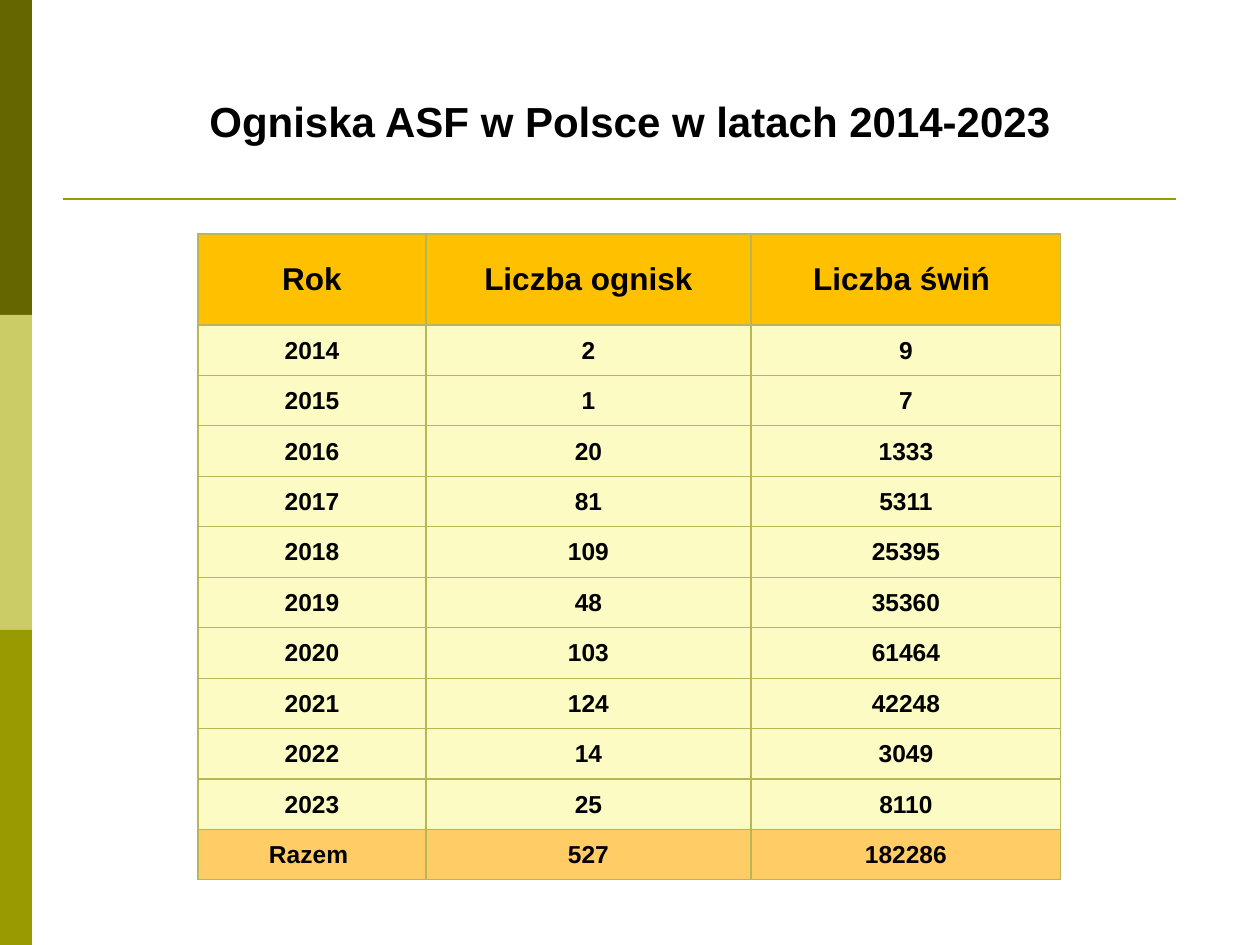
from dataclasses import dataclass

from lxml import etree
from pptx import Presentation
from pptx.dml.color import RGBColor
from pptx.enum.shapes import MSO_CONNECTOR, MSO_SHAPE
from pptx.enum.text import MSO_ANCHOR, PP_ALIGN
from pptx.oxml.ns import qn
from pptx.util import Emu, Pt

RECT = MSO_SHAPE.RECTANGLE
STRAIGHT = MSO_CONNECTOR.STRAIGHT
CENTER = PP_ALIGN.CENTER
MIDDLE = MSO_ANCHOR.MIDDLE
BOTTOM = MSO_ANCHOR.BOTTOM
TITLE_ONLY = 5

FONT = "Arial"
PX_PER_INCH = 126
COLORS = {
    "text": "000000",
    "dark": "666600",
    "light": "CCCC66",
    "olive": "999900",
    "header": "FFC000",
    "body": "FDFBC4",
    "total": "FFCC66",
    "border": "B7B758",
}

TITLE = "Ogniska ASF w Polsce w latach 2014-2023"
BAR_W, BAR_H = 32, 315
BAR_COLORS = ["dark", "light", "olive"]
COL_WIDTHS = [228, 325, 310]
HEADER_H, BODY_H = 91, 555


@dataclass
class Row:
    cells: tuple[str, str, str]
    fill: str = "body"
    size: int = 14


ROWS = [
    Row(("Rok", "Liczba ognisk", "Liczba świń "), "header", 18),
    Row(("2014", "2", "9")),
    Row(("2015", "1", "7")),
    Row(("2016", "20", "1333")),
    Row(("2017", "81", "5311")),
    Row(("2018", "109", "25395")),
    Row(("2019", "48", "35360")),
    Row(("2020", "103", "61464")),
    Row(("2021", "124", "42248")),
    Row(("2022", "14", "3049")),
    Row(("2023", "25", "8110")),
    Row(("Razem ", "527", "182286"), "total"),
]


def px(n: int) -> Emu:
    return Emu(round(n * 914400 / PX_PER_INCH))


def rgb(name: str) -> RGBColor:
    return RGBColor.from_string(COLORS[name])


def write(tf, text: str, size: int) -> None:
    p = tf.paragraphs[0]
    p.alignment = CENTER
    r = p.add_run()
    r.text = text
    r.font.name = FONT
    r.font.size = Pt(size)
    r.font.bold = True
    r.font.color.rgb = rgb("text")


def add_bar(s, index: int, color: str) -> None:
    sp = s.shapes.add_shape(RECT, 0, px(index * BAR_H), px(BAR_W), px(BAR_H))
    sp.shadow.inherit = False
    sp.fill.solid()
    sp.fill.fore_color.rgb = rgb(color)
    sp.line.fill.background()


def add_rule(s) -> None:
    cxn = s.shapes.add_connector(STRAIGHT, px(63), px(199), px(1176), px(199))
    cxn.line.color.rgb = rgb("olive")
    cxn.line.width = Pt(1.5)
    etree.SubElement(cxn._element.spPr, qn("a:effectLst"))


def set_title(s) -> None:
    sp = s.shapes.title
    sp.left, sp.top, sp.width, sp.height = px(63), px(26), px(1134), px(126)
    tf = sp.text_frame
    tf.word_wrap = True
    tf.vertical_anchor = BOTTOM
    write(tf, TITLE, 24)


def set_borders(cell) -> None:
    tc_pr = cell._tc.get_or_add_tcPr()
    for side in ("lnL", "lnR", "lnT", "lnB"):
        ln = etree.SubElement(tc_pr, qn(f"a:{side}"), w=str(Pt(0.75)))
        fill = etree.SubElement(ln, qn("a:solidFill"))
        etree.SubElement(fill, qn("a:srgbClr"), val=COLORS["border"])


def fill_cell(cell, text: str, row: Row) -> None:
    cell.margin_left = cell.margin_right = cell.margin_top = px(1)
    cell.margin_bottom = 0
    cell.vertical_anchor = MIDDLE
    set_borders(cell)
    cell.fill.solid()
    cell.fill.fore_color.rgb = rgb(row.fill)
    write(cell.text_frame, text, row.size)


def add_outbreak_table(s) -> None:
    frame = s.shapes.add_table(
        len(ROWS), len(COL_WIDTHS), px(198), px(234),
        px(sum(COL_WIDTHS)), px(HEADER_H + BODY_H),
    )
    table = frame.table
    for col, width in zip(table.columns, COL_WIDTHS):
        col.width = px(width)
    for i, row in enumerate(ROWS):
        table.rows[i].height = px(BODY_H) // (len(ROWS) - 1) if i else px(HEADER_H)
        for j, text in enumerate(row.cells):
            fill_cell(table.cell(i, j), text, row)


def main() -> None:
    prs = Presentation()
    prs.slide_width, prs.slide_height = px(1260), px(945)
    s = prs.slides.add_slide(prs.slide_layouts[TITLE_ONLY])
    for i, color in enumerate(BAR_COLORS):
        add_bar(s, i, color)
    add_rule(s)
    set_title(s)
    add_outbreak_table(s)
    prs.save("out.pptx")


if __name__ == "__main__":
    main()
